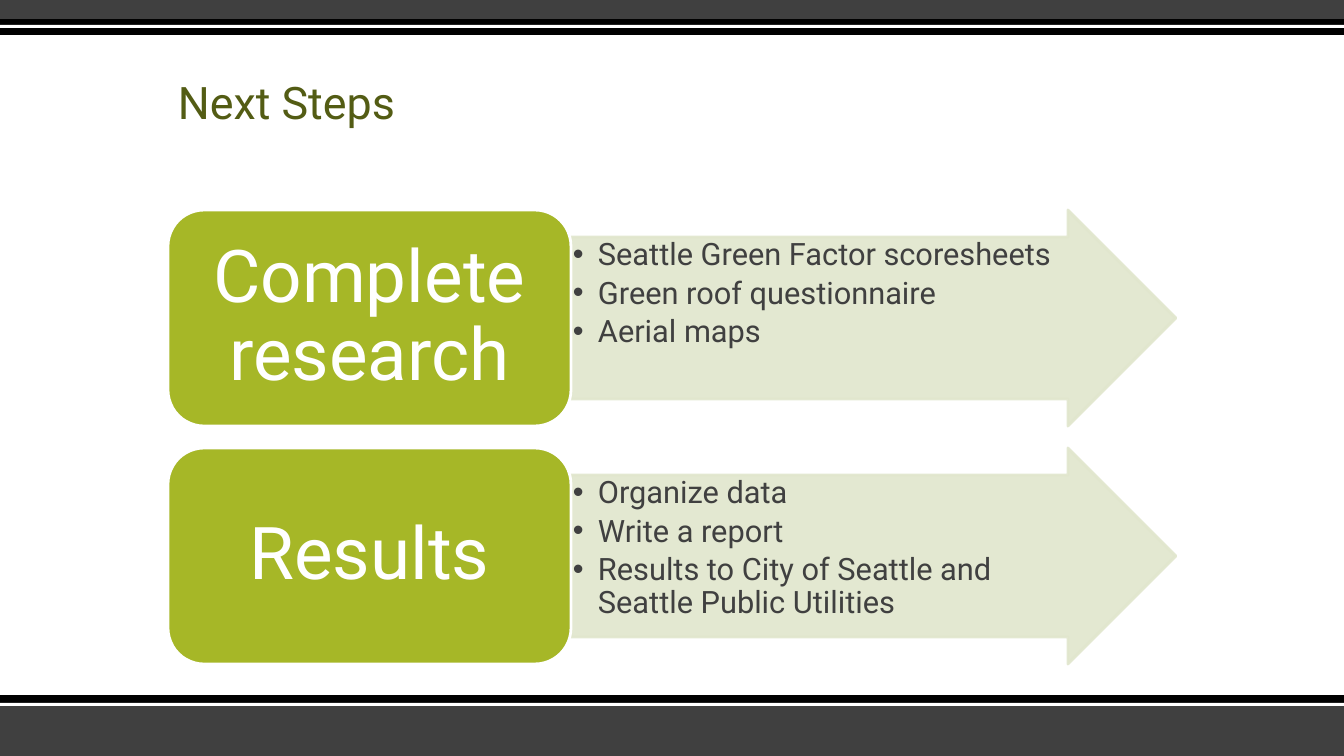
import dataclasses

import lxml.etree
import pptx
import pptx.dml.color
import pptx.enum.shapes
import pptx.enum.text
import pptx.oxml.ns
import pptx.util

SHAPE = pptx.enum.shapes.MSO_SHAPE
ANCHOR = pptx.enum.text.MSO_ANCHOR
ALIGN = pptx.enum.text.PP_ALIGN


@dataclasses.dataclass(frozen=True)
class Theme:
    font: str = "Roboto"
    title_size: int = 32
    label_size: int = 52
    list_size: int = 22
    title_color: str = "535C14"
    text_color: str = "404040"
    band_color: str = "404040"
    black: str = "000000"
    white: str = "FFFFFF"
    box_color: str = "A6B727"
    arrow_color: str = "E1E6CD"


THEME = Theme()
WIDTH, HEIGHT = 1344, 756
STEPS = [
    ("Complete research",
     ["Seattle Green Factor scoresheets", "Green roof questionnaire", "Aerial maps"]),
    ("Results",
     ["Organize data", "Write a report",
      "Results to City of Seattle and Seattle Public Utilities"]),
]


def px(length):
    return pptx.util.Emu(round(length * 914400 / 100.8))


def rgb(color):
    return pptx.dml.color.RGBColor.from_string(color)


def place(shape, left, top, width, height):
    shape.left, shape.top = px(left), px(top)
    shape.width, shape.height = px(width), px(height)


def write_text(shape, lines, *, size, color, align=ALIGN.LEFT, anchor=ANCHOR.TOP,
               insets=(0, 0, 0, 0), hanging=0, space_after=0):
    frame = shape.text_frame
    frame.word_wrap = True
    frame.auto_size = pptx.enum.text.MSO_AUTO_SIZE.NONE
    frame.vertical_anchor = anchor
    (frame.margin_left, frame.margin_top,
     frame.margin_right, frame.margin_bottom) = map(px, insets)
    frame.text = "\n".join(lines)
    for paragraph in frame.paragraphs:
        properties = paragraph._p.get_or_add_pPr()
        properties.set("marL", str(px(hanging)))
        properties.set("indent", str(-px(hanging)))
        paragraph.alignment = align
        paragraph.line_spacing = 0.9
        paragraph.space_before = pptx.util.Pt(0)
        paragraph.space_after = pptx.util.Pt(space_after)
        for run in paragraph.runs:
            run.font.name = THEME.font
            run.font.size = pptx.util.Pt(size)
            run.font.color.rgb = rgb(color)


def add_block(slide, kind, box, fill, line=None, opacity=100):
    shape = slide.shapes.add_shape(kind, *map(px, box))
    shape.shadow.inherit = False
    shape.fill.solid()
    shape.fill.fore_color.rgb = rgb(fill)
    if line:
        shape.line.color.rgb = rgb(line)
        shape.line.width = pptx.util.Pt(2)
    else:
        shape.line.fill.background()
    if opacity < 100:
        for color in shape.element.spPr.iter(pptx.oxml.ns.qn("a:srgbClr")):
            alpha = lxml.etree.SubElement(color, pptx.oxml.ns.qn("a:alpha"))
            alpha.set("val", str(opacity * 1000))
    return shape


def add_bands(slide, top, bands):
    for offset, height, color in bands:
        add_block(slide, SHAPE.RECTANGLE, (0, top + offset, WIDTH, height), color)


def add_title(slide, text, box):
    title = slide.shapes.title
    place(title, *box)
    write_text(title, [text], size=THEME.title_size, color=THEME.title_color,
               insets=(10, 14, 10, 5))
    slide.shapes.element.append(title.element)


def add_step(slide, body, label, items, left, top, height):
    box_width, arrow_width = 403, 605
    arrow_left = left + box_width

    # Arrow, with the list in its shaft
    arrow = add_block(slide, SHAPE.RIGHT_ARROW, (arrow_left, top, arrow_width, height),
                      THEME.arrow_color, THEME.arrow_color, opacity=90)
    arrow.adjustments[0], arrow.adjustments[1] = 0.75, 0.5
    place(body, arrow_left, top + height / 8, arrow_width - 81, height * 3 / 4)
    write_text(body, items, size=THEME.list_size, color=THEME.text_color,
               insets=(2, 2, 2, 2), hanging=25, space_after=3.8)
    slide.shapes.element.append(body.element)

    # Rounded label box
    box = add_block(slide, SHAPE.ROUNDED_RECTANGLE, (left, top, box_width, height),
                    THEME.box_color, THEME.white)
    write_text(box, [label], size=THEME.label_size, color=THEME.white,
               align=ALIGN.CENTER, anchor=ANCHOR.MIDDLE, insets=(22, 11, 22, 11))


def build_next_steps(presentation):
    slide = presentation.slides.add_slide(
        presentation.slide_layouts.get_by_name("Two Content"))
    bodies = [slide.placeholders[1], slide.placeholders[2]]

    # Bands at the bottom and top edges
    add_bands(slide, 695, [(11, 50, THEME.band_color), (0, 11, THEME.black),
                           (8, 3, THEME.white)])
    add_bands(slide, 0, [(0, 19, THEME.band_color), (19, 16, THEME.black),
                         (25, 3, THEME.white)])

    # Title and steps
    add_title(slide, "Next Steps", (168, 67, 1008, 118))
    for row, (body, (label, items)) in enumerate(zip(bodies, STEPS)):
        add_step(slide, body, label, items, left=168, top=210 + row * 238, height=216)


def main():
    presentation = pptx.Presentation()
    presentation.slide_width, presentation.slide_height = px(WIDTH), px(HEIGHT)
    build_next_steps(presentation)
    presentation.save("out.pptx")


if __name__ == "__main__":
    main()
